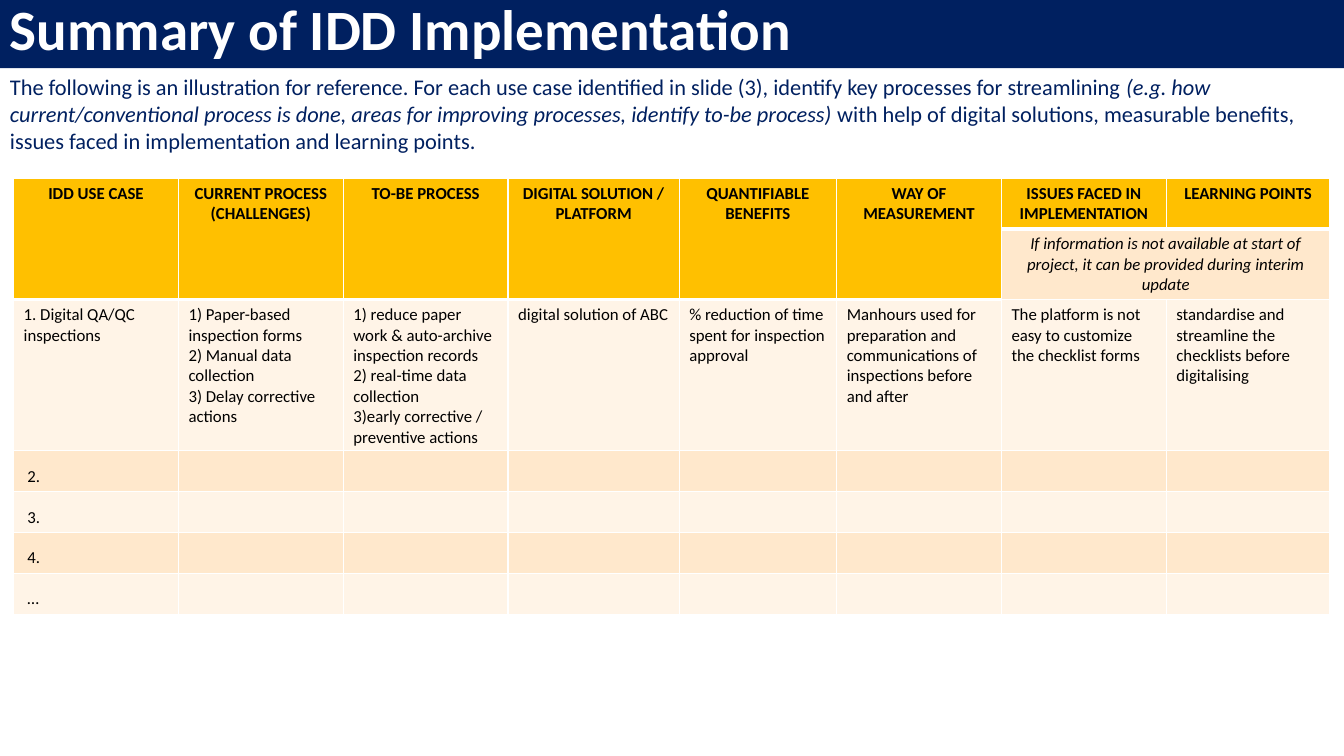
from lxml.etree import SubElement
from pptx import Presentation
from pptx.dml.color import RGBColor
from pptx.enum.shapes import MSO_SHAPE
from pptx.enum.text import MSO_ANCHOR, PP_ALIGN
from pptx.oxml.ns import qn
from pptx.util import Emu, Pt

NAVY = RGBColor(0x00, 0x20, 0x60)
WHITE = RGBColor(0xFF, 0xFF, 0xFF)
BLACK = RGBColor(0x00, 0x00, 0x00)
AMBER = RGBColor(0xFF, 0xC0, 0x00)
PEACH = RGBColor(0xFF, 0xE8, 0xCC)
CREAM = RGBColor(0xFF, 0xF4, 0xE7)

HEADERS = [
    "IDD USE CASE", "CURRENT PROCESS (CHALLENGES)", "TO-BE PROCESS",
    "DIGITAL SOLUTION / PLATFORM", "QUANTIFIABLE BENEFITS", "WAY OF MEASUREMENT",
    "ISSUES FACED IN IMPLEMENTATION", "LEARNING POINTS",
]
LATE_NOTE = ("If information is not available at start of project, "
             "it can be provided during interim update")
FIRST_CASE = [
    "1. Digital QA/QC inspections",
    "1) Paper-based inspection forms\n2) Manual data collection\n3) Delay corrective actions",
    "1) reduce paper work & auto-archive inspection records\n"
    "2) real-time data collection\n3)early corrective / preventive actions",
    "digital solution of ABC",
    "% reduction of time spent for inspection approval",
    "Manhours used for preparation and communications of inspections before and after",
    "The platform is not easy to customize the checklist forms",
    "standardise and streamline the checklists before digitalising",
]
OPEN_CASES = ["2.", "3.", "4.", "…"]
INTRO = [
    ("The following is an illustration for reference. For each use case identified in "
     "slide (3), identify key processes for streamlining ", False),
    ("(e.g. how current/conventional process is done, areas for improving processes, "
     "identify to-be process)", True),
    (" with help of digital solutions, measurable benefits, issues faced in "
     "implementation and learning points.", False),
]
COLUMN_WIDTHS = [157, 157, 157, 163, 150, 157, 157, 156]
ROW_HEIGHTS = [47, 67, 144] + [39] * len(OPEN_CASES)
NOTE_COLUMN = 6


def px(length):
    return Emu(length * 9525)


class SlideBuilder:
    font = "Calibri"

    def __init__(self, page):
        self.page = page

    def style(self, paragraph, size, color, bold=False, italic=False):
        for span in paragraph.runs:
            span.font.name = self.font
            span.font.size = Pt(size)
            span.font.bold = bold
            span.font.italic = italic
            span.font.color.rgb = color

    def banner(self, left, top, width, height, text):
        box = self.page.shapes.add_shape(
            MSO_SHAPE.RECTANGLE, px(left), px(top), px(width), px(height))
        box.shadow.inherit = False
        box.fill.solid()
        box.fill.fore_color.rgb = NAVY
        box.line.fill.background()
        box.text_frame.vertical_anchor = MSO_ANCHOR.MIDDLE
        paragraph = box.text_frame.paragraphs[0]
        paragraph.text = text
        paragraph.alignment = PP_ALIGN.LEFT
        paragraph.line_spacing = 0.8
        self.style(paragraph, 40.7, WHITE, bold=True)

    def intro(self, left, top, width, height, parts):
        box = self.page.shapes.add_textbox(px(left), px(top), px(width), px(height))
        box.text_frame.word_wrap = True
        paragraph = box.text_frame.paragraphs[0]
        for text, _ in parts:
            paragraph.add_run().text = text
        self.style(paragraph, 16, NAVY)
        for span, (_, italic) in zip(paragraph.runs, parts):
            span.font.italic = italic

    def table(self, left, top, widths, heights):
        frame = self.page.shapes.add_table(
            len(heights), len(widths), px(left), px(top), px(sum(widths)), px(sum(heights)))
        table = frame.table
        table.first_row = False
        table.horz_banding = False
        for column, width in zip(table.columns, widths):
            column.width = px(width)
        for row, height in zip(table.rows, heights):
            row.height = px(height)
        return table

    def paint(self, cell, fill, bottom=1):
        properties = cell._tc.get_or_add_tcPr()
        for side, points in (("L", 1), ("R", 1), ("T", 1), ("B", bottom)):
            line = SubElement(properties, qn(f"a:ln{side}"), w=str(Pt(points)))
            color = SubElement(SubElement(line, qn("a:solidFill")), qn("a:srgbClr"))
            color.set("val", str(WHITE))
        cell.fill.solid()
        cell.fill.fore_color.rgb = fill

    def label(self, cell, text, centered=False, bold=False, italic=False):
        paragraph = cell.text_frame.paragraphs[0]
        paragraph.text = text
        paragraph.alignment = PP_ALIGN.CENTER if centered else PP_ALIGN.LEFT
        self.style(paragraph, 12, BLACK, bold, italic)


def fill_use_cases(builder, table):
    for row in range(len(ROW_HEIGHTS)):
        for column in range(len(COLUMN_WIDTHS)):
            is_header = row == 0 or (row == 1 and column < NOTE_COLUMN)
            fill = AMBER if is_header else PEACH if row % 2 else CREAM
            builder.paint(table.cell(row, column), fill, bottom=3 if is_header else 1)
    for column, header in enumerate(HEADERS):
        if column < NOTE_COLUMN:
            table.cell(0, column).merge(table.cell(1, column))
        builder.label(table.cell(0, column), header, centered=True, bold=True)
    note = table.cell(1, NOTE_COLUMN)
    note.merge(table.cell(1, NOTE_COLUMN + 1))
    builder.label(note, LATE_NOTE, centered=True, italic=True)
    for column, text in enumerate(FIRST_CASE):
        builder.label(table.cell(2, column), text)
    for row, text in enumerate(OPEN_CASES, start=3):
        cell = table.cell(row, 0)
        cell.vertical_anchor = MSO_ANCHOR.BOTTOM
        cell.margin_left = px(13)
        builder.label(cell, text)


def main():
    deck = Presentation()
    deck.slide_width, deck.slide_height = px(1280), px(720)
    builder = SlideBuilder(deck.slides.add_slide(deck.slide_layouts[6]))
    builder.intro(0, 65, 1280, 87, INTRO)
    fill_use_cases(builder, builder.table(13, 170, COLUMN_WIDTHS, ROW_HEIGHTS))
    builder.banner(0, 0, 1280, 65, "Summary of IDD Implementation")
    deck.save("out.pptx")


if __name__ == "__main__":
    main()
